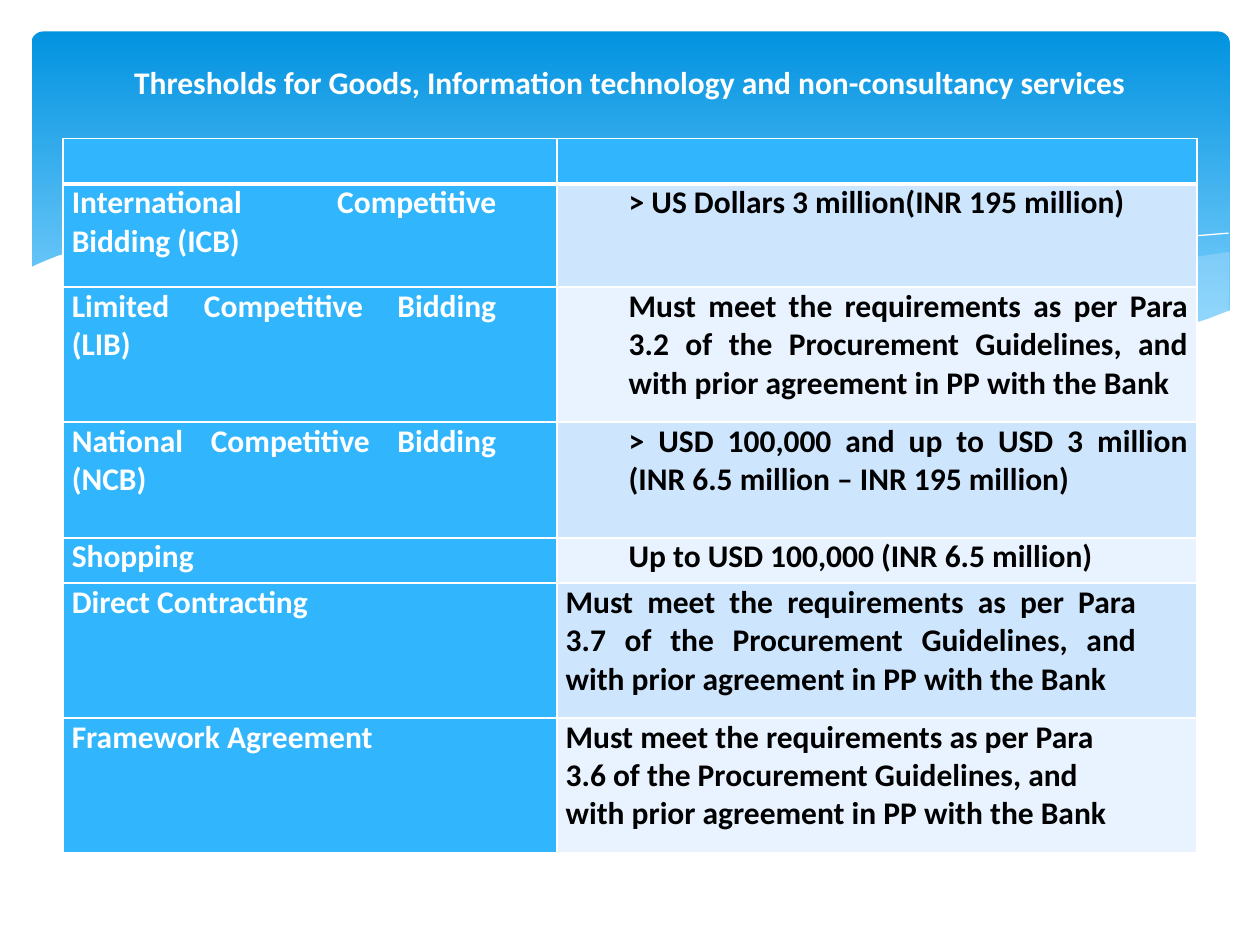
from pptx import Presentation
from pptx.dml.color import RGBColor
from pptx.enum.shapes import MSO_SHAPE
from pptx.enum.text import MSO_ANCHOR, PP_ALIGN
from pptx.oxml.ns import qn
from pptx.util import Inches, Pt
from lxml.etree import SubElement

WHITE, BLACK, BLUE = "FFFFFF", "000000", "31B6FD"
BANDS = ["CEE5FE", "E8F3FF"]
COLUMN_WIDTHS = [3.92, 5.08]
ROW_HEIGHTS = [0.36, 0.82, 1.07, 0.92, 0.36, 1.07, 1.07]
INDENT, RIGHT_INDENT = 0.5, 0.41

# Method, threshold, threshold is indented, threshold alignment
THRESHOLDS = [
    ("International Competitive Bidding (ICB) ",
     "> US Dollars 3 million(INR 195 million)", True, PP_ALIGN.JUSTIFY),
    ("Limited Competitive Bidding (LIB) ",
     "Must meet the requirements as per Para 3.2 of the Procurement Guidelines, "
     "and with prior agreement in PP with the Bank", True, PP_ALIGN.JUSTIFY),
    ("National Competitive Bidding (NCB) ",
     "> USD 100,000 and up to USD 3 million (INR 6.5 million – INR 195 million)",
     True, PP_ALIGN.JUSTIFY),
    ("Shopping ", "Up to USD 100,000 (INR 6.5 million)", True, PP_ALIGN.JUSTIFY),
    ("Direct Contracting",
     "Must meet the requirements as per Para 3.7 of the Procurement Guidelines, "
     "and with prior agreement in PP with the Bank", False, PP_ALIGN.JUSTIFY),
    ("Framework Agreement ",
     "Must meet the requirements as per Para 3.6 of the Procurement Guidelines, "
     "and with prior agreement in PP with the Bank", False, PP_ALIGN.LEFT),
]

# Wave outlines in hundredths of an inch, relative to the panel's corner
RIGHT_WAVE = [(950, 175), (923, 179), (896, 185), (866, 191), (836, 198), (780, 212),
              (728, 223), (681, 232), (636, 240), (666, 244), (694, 247), (720, 250),
              (744, 252), (767, 252), (789, 253), (810, 252), (829, 251), (847, 249),
              (864, 247), (880, 244), (896, 240), (910, 237), (924, 232), (938, 227),
              (950, 222), (951, 175)]
MIDDLE_WAVE = [(868, 248), (841, 244), (782, 235), (716, 222), (643, 206), (604, 197),
               (573, 189), (544, 183), (516, 178), (489, 173), (464, 169), (417, 164),
               (374, 161), (336, 160), (303, 162), (274, 164), (261, 166), (298, 171),
               (337, 178), (379, 186), (424, 197), (466, 207), (541, 223), (576, 230),
               (609, 236), (640, 241), (670, 245), (697, 249), (723, 251), (748, 252),
               (771, 253), (793, 253), (813, 253), (832, 252), (851, 250)]
LONG_CURVE = [(284, 170), (303, 167), (328, 164), (362, 162), (391, 162), (425, 163),
              (464, 165), (508, 169), (557, 175), (611, 183), (670, 194), (735, 208),
              (806, 226), (882, 247)]
RISING_CURVE = [(588, 232), (628, 221), (670, 210), (723, 198), (781, 185), (841, 174),
                (885, 167), (926, 162), (950, 160)]
WHITE_WAVE = [(952, 221), (934, 228), (915, 234), (895, 240), (874, 244), (850, 248),
              (825, 250), (798, 252), (768, 251), (736, 250), (701, 247), (663, 243),
              (623, 237), (578, 229), (530, 220), (478, 208), (422, 195), (366, 182),
              (315, 172), (267, 165), (225, 161), (186, 159), (152, 159), (121, 160),
              (94, 162), (70, 166), (51, 170), (34, 174), (21, 178), (11, 182),
              (4, 185), (-2, 188), (-2, 304), (952, 304)]


def rgb(color):
    return RGBColor.from_string(color)


def draw_wave(shapes, left, top, points, fill=None, opacity=100):
    """Draw a filled wave, or an open white hairline when no fill is given."""
    placed = [(x + round(left * 100), y + round(top * 100)) for x, y in points]
    builder = shapes.build_freeform(*placed[0], scale=Inches(0.01))
    builder.add_line_segments(placed[1:], close=fill is not None)
    shape = builder.convert_to_shape()
    shape.shadow.inherit = False
    if fill is None:
        shape.fill.background()
        shape.line.color.rgb = rgb(WHITE)
        shape.line.width = Pt(0)
        return
    shape.fill.solid()
    shape.fill.fore_color.rgb = rgb(fill)
    shape.line.fill.background()
    if opacity < 100:
        color = shape.element.spPr.find(qn("a:solidFill"))[0]
        SubElement(color, qn("a:alpha"), val=str(opacity * 1000))


def add_banner(slide, left, top, width, height):
    # Gradient panel
    panel = slide.shapes.add_shape(MSO_SHAPE.ROUNDED_RECTANGLE, Inches(left),
                                   Inches(top), Inches(width), Inches(height))
    panel.adjustments[0] = 0.034
    panel.shadow.inherit = False
    panel.line.fill.background()
    panel.fill.gradient()
    panel.fill.gradient_angle = 270
    for stop, position, color in zip(panel.fill.gradient_stops, (0, 0.9),
                                     ("0293E0", "83D3FE")):
        stop.position = position
        stop.color.rgb = rgb(color)
    # Waves along the lower edge
    waves = slide.shapes.add_group_shape().shapes
    draw_wave(waves, left, top, RIGHT_WAVE, "C6E7FC", 29)
    draw_wave(waves, left, top, MIDDLE_WAVE, "C6E7FC", 40)
    draw_wave(waves, left, top, LONG_CURVE)
    draw_wave(waves, left, top, RISING_CURVE)
    draw_wave(waves, left, top, WHITE_WAVE, WHITE)


def format_font(font, color):
    font.name = "Calibri"
    font.size = Pt(18)
    font.bold = True
    font.color.rgb = rgb(color)


def add_title(slide, left, top, width, height):
    title = slide.shapes.title
    title.left, title.top = Inches(left), Inches(top)
    title.width, title.height = Inches(width), Inches(height)
    frame = title.text_frame
    frame.text = "Thresholds for Goods, Information technology and non-consultancy services"
    frame.word_wrap = True
    frame.vertical_anchor = MSO_ANCHOR.MIDDLE
    paragraph = frame.paragraphs[0]
    paragraph.alignment = PP_ALIGN.CENTER
    format_font(paragraph.runs[0].font, WHITE)
    # Bring the title in front of the banner
    title.element.getparent().append(title.element)


def format_cell(cell, fill, bottom_width=1, top_width=1):
    cell.margin_left = cell.margin_right = Inches(0.07)
    cell.margin_top = cell.margin_bottom = 0
    properties = cell._tc.get_or_add_tcPr()
    widths = {"a:lnL": 1, "a:lnR": 1, "a:lnT": top_width, "a:lnB": bottom_width}
    for tag, width in widths.items():
        line = SubElement(properties, qn(tag), w=str(Pt(width)))
        SubElement(SubElement(line, qn("a:solidFill")), qn("a:srgbClr"), val=WHITE)
    cell.fill.solid()
    cell.fill.fore_color.rgb = rgb(fill)


def write_cell(cell, text, color, alignment, indented=False):
    cell.text_frame.text = text
    paragraph = cell.text_frame.paragraphs[0]
    paragraph.alignment = alignment
    paragraph.space_after = Pt(6)
    properties = paragraph._p.get_or_add_pPr()
    if indented:
        paragraph.space_before = Pt(3)
        properties.set("marL", str(Inches(INDENT)))
    else:
        properties.set("marR", str(Inches(RIGHT_INDENT)))
    format_font(paragraph.runs[0].font, color)


def add_threshold_table(slide, left, top, width, height):
    table = slide.shapes.add_table(len(ROW_HEIGHTS), len(COLUMN_WIDTHS), Inches(left),
                                   Inches(top), Inches(width), Inches(height)).table
    table.horz_banding = False
    for column, column_width in zip(table.columns, COLUMN_WIDTHS):
        column.width = Inches(column_width)
    for row, row_height in zip(table.rows, ROW_HEIGHTS):
        row.height = Inches(row_height)
    # Empty header row with a thick lower border
    for cell in table.rows[0].cells:
        format_cell(cell, BLUE, bottom_width=3)
        cell.text_frame.paragraphs[0].font.size = Pt(18)
    # One row for each procurement method
    for index, (method, threshold, indented, alignment) in enumerate(THRESHOLDS):
        method_cell, threshold_cell = table.rows[index + 1].cells
        top_width = 3 if index == 0 else 1
        format_cell(method_cell, BLUE, top_width=top_width)
        format_cell(threshold_cell, BANDS[index % 2], top_width=top_width)
        write_cell(method_cell, method, WHITE, PP_ALIGN.JUSTIFY)
        write_cell(threshold_cell, threshold, BLACK, alignment, indented)


def main():
    presentation = Presentation()
    presentation.slide_width, presentation.slide_height = Inches(10), Inches(7.5)
    slide = presentation.slides.add_slide(presentation.slide_layouts[5])
    add_banner(slide, 0.25, 0.25, 9.51, 2.7)
    add_threshold_table(slide, 0.5, 1.1, 9, 5.65)
    add_title(slide, 0.5, 0.3, 9, 0.7)
    presentation.save("out.pptx")


if __name__ == "__main__":
    main()
